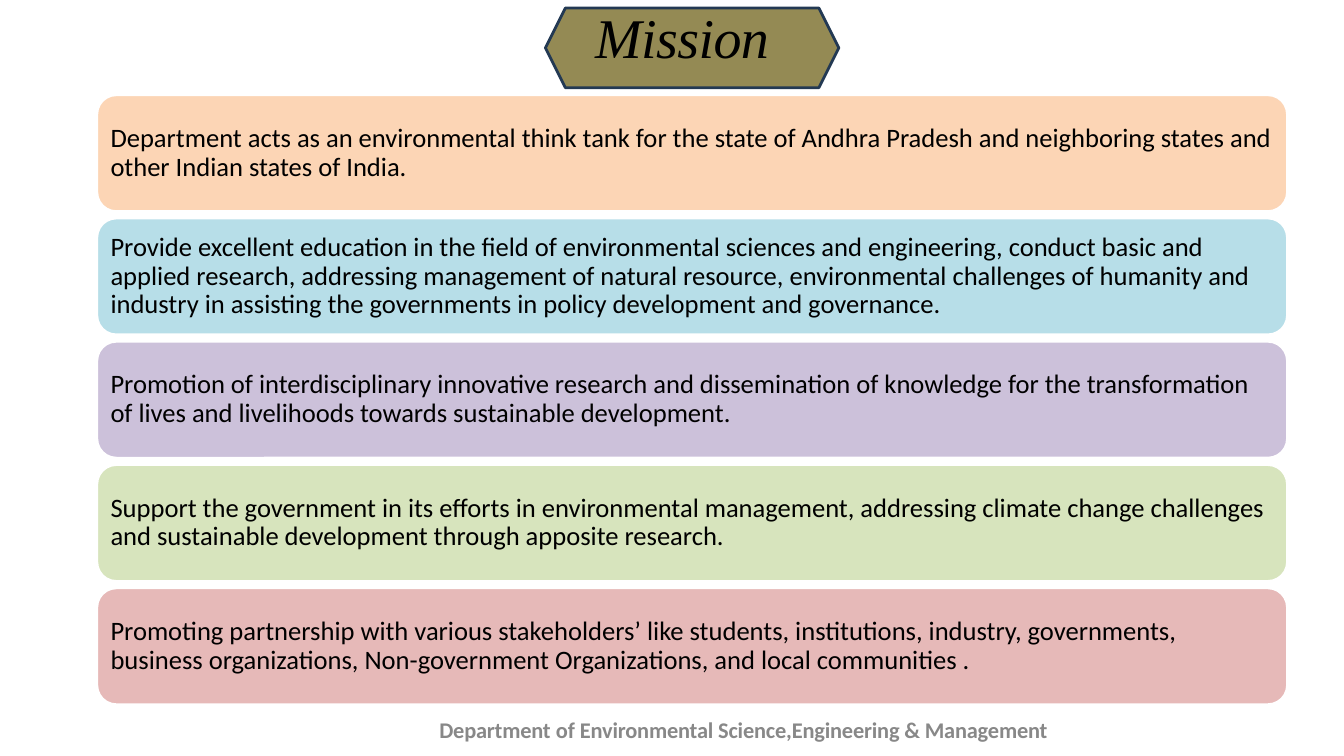
from pptx import Presentation
from pptx.dml.color import RGBColor
from pptx.enum.shapes import MSO_SHAPE
from pptx.enum.text import MSO_ANCHOR, PP_ALIGN
from pptx.util import Inches, Pt

BLACK = RGBColor(0x00, 0x00, 0x00)
WHITE = RGBColor(0xFF, 0xFF, 0xFF)
GRAY = RGBColor(0x88, 0x88, 0x88)
OLIVE = RGBColor(0x94, 0x8A, 0x54)
NAVY = RGBColor(0x23, 0x39, 0x53)
PEACH = RGBColor(0xFC, 0xD5, 0xB5)
AQUA = RGBColor(0xB7, 0xDE, 0xE8)
LILAC = RGBColor(0xCC, 0xC1, 0xDA)
GREEN = RGBColor(0xD7, 0xE4, 0xBD)
ROSE = RGBColor(0xE6, 0xB9, 0xB8)

MISSIONS = [
    (PEACH, "Department acts as an environmental think tank for the state of Andhra Pradesh "
            "and neighboring states and other Indian states of India."),
    (AQUA, "Provide excellent education in the field of environmental sciences and engineering, "
           "conduct basic and applied research, addressing management of natural resource, "
           "environmental challenges of humanity and industry in assisting the governments in "
           "policy development and governance."),
    (LILAC, "Promotion of interdisciplinary innovative research and dissemination of knowledge "
            "for the transformation of lives and livelihoods towards sustainable development."),
    (GREEN, "Support the government in its efforts in environmental management, addressing "
            "climate change challenges and sustainable development through apposite research."),
    (ROSE, "Promoting partnership with various stakeholders’ like students, institutions, "
           "industry, governments, business organizations, Non-government Organizations, and "
           "local communities ."),
]

prs = Presentation()
prs.slide_width = Inches(13.33)
prs.slide_height = Inches(7.5)
s = prs.slides.add_slide(prs.slide_layouts[6])


def add_panel(kind, left, top, width, height, fill, line):
    sp = s.shapes.add_shape(kind, Inches(left), Inches(top), Inches(width), Inches(height))
    sp.shadow.inherit = False
    sp.fill.solid()
    sp.fill.fore_color.rgb = fill
    sp.line.color.rgb = line
    sp.line.width = Pt(2)
    return sp


def add_run(p, text, font, size, color, spacing=0):
    r = p.add_run()
    r.text = text
    r.font.name = font
    r.font.size = Pt(size)
    r.font.color.rgb = color
    if spacing:
        r._r.get_or_add_rPr().set("spc", str(spacing))
    return r


footer = s.shapes.add_textbox(Inches(4.25), Inches(7.08), Inches(6.25), Inches(0.28))
tf = footer.text_frame
tf.word_wrap = True
tf.margin_left = tf.margin_right = tf.margin_bottom = 0
tf.margin_top = Inches(0.02)
p = tf.paragraphs[0]
p.alignment = PP_ALIGN.CENTER
for text, spacing in [
    ("Department ", -10),
    ("of ", 0),
    ("Environmental Science,Engineering & Management", -10),
]:
    add_run(p, text, "Calibri", 16, GRAY, spacing).font.bold = True

for i, (color, text) in enumerate(MISSIONS):
    sp = add_panel(MSO_SHAPE.ROUNDED_RECTANGLE, 0.96, 0.94 + i * 1.223, 11.81, 1.16, color, WHITE)
    tf = sp.text_frame
    tf.word_wrap = True
    tf.vertical_anchor = MSO_ANCHOR.MIDDLE
    tf.margin_left = tf.margin_right = tf.margin_top = tf.margin_bottom = Inches(0.08)
    p = tf.paragraphs[0]
    p.alignment = PP_ALIGN.LEFT
    p.line_spacing = 0.9
    add_run(p, text, "Calibri", 19, BLACK)

add_panel(MSO_SHAPE.HEXAGON, 5.41, 0.08, 2.91, 0.79, OLIVE, NAVY)

title = s.shapes.add_textbox(Inches(5.72), Inches(-0.02), Inches(2.09), Inches(0.77))
tf = title.text_frame
tf.word_wrap = True
p = tf.paragraphs[0]
p.alignment = PP_ALIGN.CENTER
add_run(p, "Mission", "Times New Roman", 40, BLACK, -40).font.italic = True

prs.save("out.pptx")
